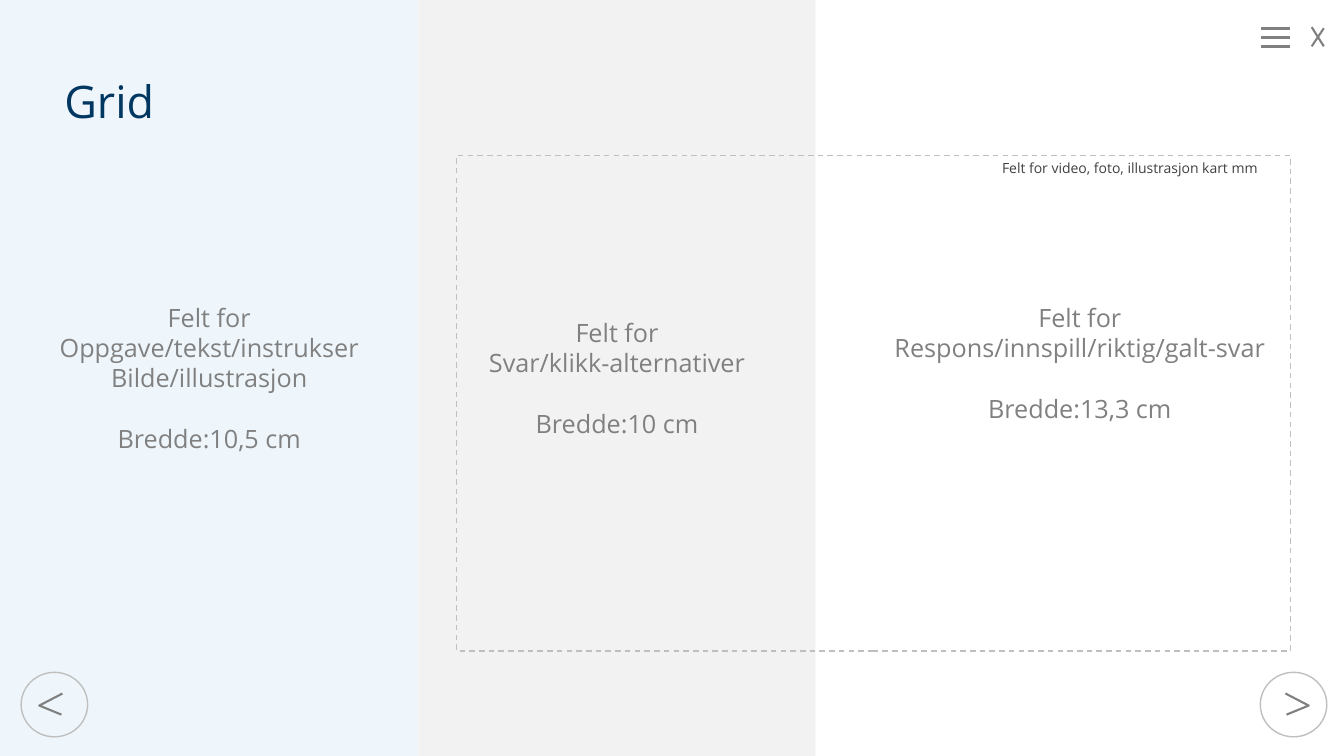
from dataclasses import dataclass

from lxml import etree
from pptx import Presentation
from pptx.dml.color import RGBColor
from pptx.enum import dml, shapes, text
from pptx.oxml import ns
from pptx.util import Inches, Pt

FONT = "Open Sans"
WHITE = RGBColor(0xFF, 0xFF, 0xFF)
PALE_GREY = RGBColor(0xF2, 0xF2, 0xF2)
PALE_BLUE = RGBColor(0xEE, 0xF6, 0xFB)
GREY = RGBColor(0x80, 0x80, 0x80)
LINE_GREY = RGBColor(0xBF, 0xBF, 0xBF)
NAVY = RGBColor(0x00, 0x37, 0x61)
DARK = RGBColor(0x3F, 0x40, 0x42)


@dataclass
class Panel:
    left: float
    width: float
    fill: RGBColor
    lines: list[str]
    bottom_inset: float = 0.05


@dataclass
class NavigationButton:
    center: float
    direction: int  # -1 points left, 1 points right


@dataclass
class Label:
    left: float
    top: float
    width: float
    height: float
    wording: str
    size: float
    color: RGBColor
    anchor: text.MSO_ANCHOR
    line_spacing: float = 1.0


@dataclass
class Stroke:
    start: tuple[float, float]
    end: tuple[float, float]
    weight: float


PANELS = [
    Panel(4.15, 3.94, PALE_GREY,
          ["Felt for", "Svar/klikk-alternativer", "Bredde:10 cm"]),
    Panel(8.09, 5.24, WHITE,
          ["Felt for", "Respons/innspill/riktig/galt-svar", "Bredde:13,3 cm"], 0.35),
]
TASK_PANEL = Panel(0, 4.15, PALE_BLUE,
                   ["Felt for", "Oppgave/tekst/instrukser", "Bilde/illustrasjon",
                    "Bredde:10,5 cm"])
BUTTONS = [NavigationButton(0.54, -1), NavigationButton(12.83, 1)]
CLOSE_ICON = [Stroke((13.01, 0.27), (13.13, 0.46), 1.5),
              Stroke((13.13, 0.28), (13.01, 0.46), 1.5)]
MENU_ICON = [Stroke((12.51, y), (12.79, y), 2.25) for y in (0.28, 0.37, 0.46)]
LABELS = [
    Label(0.54, 0.25, 12, 1.45, "Grid", 32, NAVY, text.MSO_ANCHOR.MIDDLE, 1.1),
    Label(9.84, 1.53, 3.34, 0.27, "Felt for video, foto, illustrasjon kart mm", 10, DARK,
          text.MSO_ANCHOR.TOP),
]


def add_run(paragraph, wording: str, size: float, color: RGBColor) -> None:
    run = paragraph.add_run()
    run.text = wording
    run.font.name = FONT
    run.font.size = Pt(size)
    run.font.color.rgb = color


def style_outline(shape, color: RGBColor, weight: float) -> None:
    shape.shadow.inherit = False
    shape.fill.background()
    shape.line.color.rgb = color
    shape.line.width = Pt(weight)


def add_panel(slide, panel: Panel) -> None:
    shape = slide.shapes.add_shape(shapes.MSO_SHAPE.RECTANGLE, Inches(panel.left), 0,
                                   Inches(panel.width), Inches(7.5))
    shape.shadow.inherit = False
    shape.fill.solid()
    shape.fill.fore_color.rgb = panel.fill
    shape.line.fill.background()
    frame = shape.text_frame
    frame.word_wrap = True
    frame.vertical_anchor = text.MSO_ANCHOR.MIDDLE
    frame.margin_bottom = Inches(panel.bottom_inset)
    for index, line in enumerate(panel.lines):
        paragraph = frame.add_paragraph() if index else frame.paragraphs[0]
        paragraph.alignment = text.PP_ALIGN.CENTER
        add_run(paragraph, line, 18, GREY)
    # The width stands one line apart from the description
    frame.paragraphs[-1].space_before = Pt(21.7)


def add_media_frame(slide) -> None:
    shape = slide.shapes.add_shape(shapes.MSO_SHAPE.RECTANGLE, Inches(4.53), Inches(1.54),
                                   Inches(8.27), Inches(4.92))
    style_outline(shape, LINE_GREY, 1)
    shape.line.dash_style = dml.MSO_LINE.DASH


def add_stroke(slide, stroke: Stroke) -> None:
    ends = [Inches(value) for value in (*stroke.start, *stroke.end)]
    connector = slide.shapes.add_connector(shapes.MSO_CONNECTOR.STRAIGHT, *ends)
    connector.line.color.rgb = GREY
    connector.line.width = Pt(stroke.weight)
    etree.SubElement(connector._element.spPr, ns.qn("a:effectLst"))


def add_button(slide, button: NavigationButton) -> None:
    circle = slide.shapes.add_shape(shapes.MSO_SHAPE.OVAL, Inches(button.center - 0.33),
                                    Inches(6.67), Inches(0.66), Inches(0.64))
    style_outline(circle, LINE_GREY, 1)
    points = [(Inches(button.center + button.direction * offset), Inches(y))
              for offset, y in ((-0.08, 6.88), (0.15, 7), (-0.07, 7.09))]
    builder = slide.shapes.build_freeform(*points[0])
    builder.add_line_segments(points[1:], close=False)
    style_outline(builder.convert_to_shape(), GREY, 1.5)


def add_label(slide, label: Label) -> None:
    box = slide.shapes.add_textbox(Inches(label.left), Inches(label.top),
                                   Inches(label.width), Inches(label.height))
    frame = box.text_frame
    frame.word_wrap = True
    frame.vertical_anchor = label.anchor
    paragraph = frame.paragraphs[0]
    paragraph.line_spacing = label.line_spacing
    add_run(paragraph, label.wording, label.size, label.color)


def main() -> None:
    presentation = Presentation()
    presentation.slide_width = Inches(13.33)
    presentation.slide_height = Inches(7.5)
    slide = presentation.slides.add_slide(presentation.slide_layouts[6])

    # Columns, with the media frame over the two right ones
    for panel in PANELS:
        add_panel(slide, panel)
    add_media_frame(slide)
    add_panel(slide, TASK_PANEL)

    # Navigation
    for stroke in CLOSE_ICON + MENU_ICON:
        add_stroke(slide, stroke)
    for button in BUTTONS:
        add_button(slide, button)

    # Title and media caption
    for label in LABELS:
        add_label(slide, label)

    presentation.save("out.pptx")


if __name__ == "__main__":
    main()
